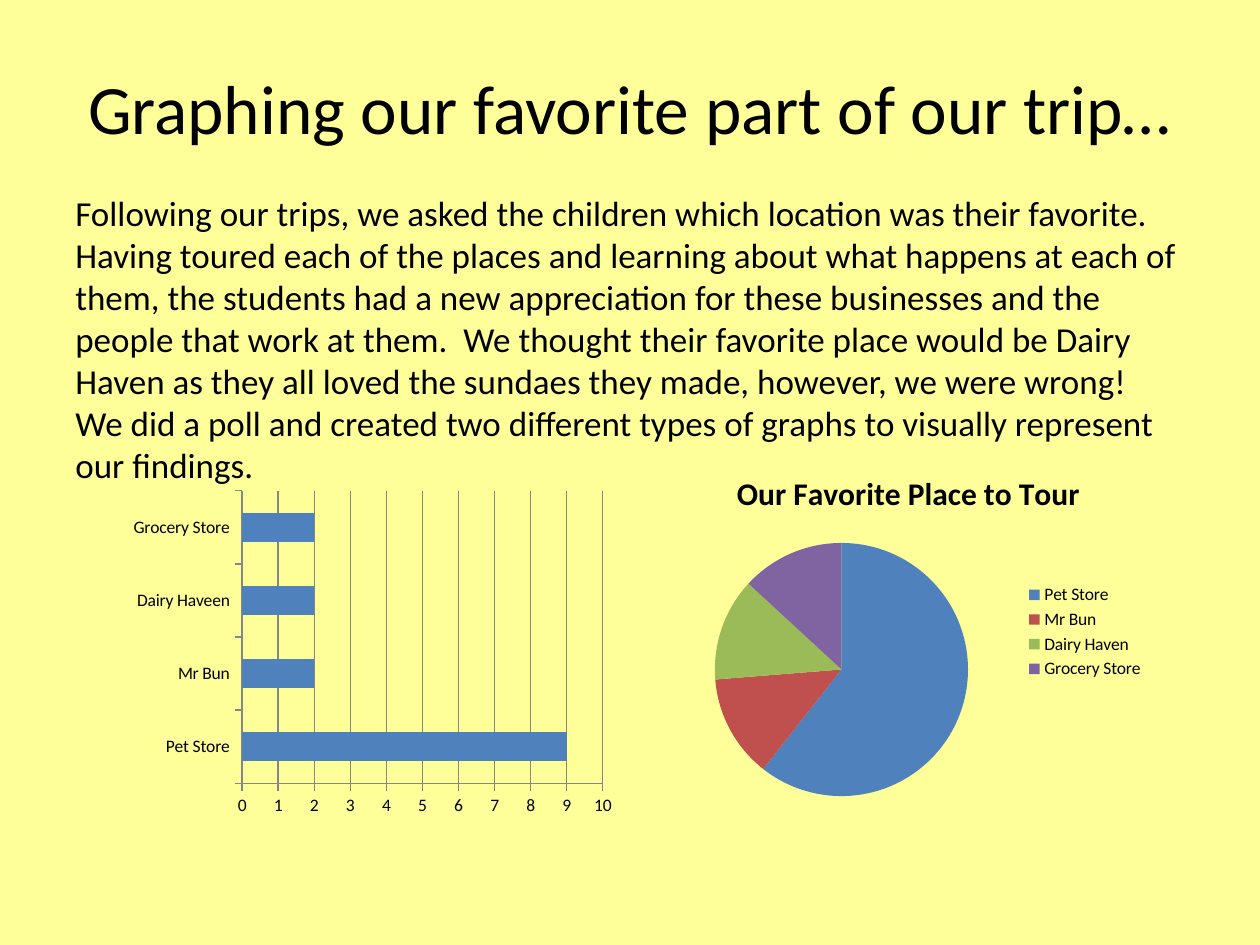
from lxml import etree
from pptx import Presentation
from pptx.chart.data import CategoryChartData
from pptx.dml.color import RGBColor
from pptx.enum.chart import XL_CHART_TYPE, XL_LEGEND_POSITION, XL_TICK_MARK
from pptx.enum.text import MSO_ANCHOR, PP_ALIGN
from pptx.util import Pt

BAR, PIE = XL_CHART_TYPE.BAR_CLUSTERED, XL_CHART_TYPE.PIE
RIGHT, OUT = XL_LEGEND_POSITION.RIGHT, XL_TICK_MARK.OUTSIDE
MIDDLE, CENTER = MSO_ANCHOR.MIDDLE, PP_ALIGN.CENTER
FONT, BLACK, GRAY = "Calibri", "000000", "868686"
COLORS = ["4F81BD", "C0504D", "9BBB59", "8064A2"]
C = "http://schemas.openxmlformats.org/drawingml/2006/chart"

rgb = RGBColor.from_string


def style(font, size):
    font.name, font.size = FONT, Pt(size)
    font.color.rgb = rgb(BLACK)


def plot_chart(kind, names, values, box, inner):
    """Add a chart; inner is the plot area as fractions x, y, w, h."""
    data = CategoryChartData()
    data.categories = names
    data.add_series("Series 1", values)
    chart = slide.shapes.add_chart(kind, *map(Pt, box), data).chart
    style(chart.font, 10)
    area = chart.plots[0]._element.getparent()
    for old in area.findall(f"{{{C}}}layout"):
        area.remove(old)
    layout = etree.Element(f"{{{C}}}layout")
    manual = etree.SubElement(layout, f"{{{C}}}manualLayout")
    marks = [("layoutTarget", "inner"), ("xMode", "edge"), ("yMode", "edge")]
    for tag, val in marks + list(zip("xywh", inner)):
        etree.SubElement(manual, f"{{{C}}}{tag}").set("val", str(val))
    area.insert(0, layout)
    return chart


prs = Presentation()
prs.slide_width, prs.slide_height = Pt(720), Pt(540)
slide = prs.slides.add_slide(prs.slide_layouts[6])
slide.background.fill.solid()
slide.background.fill.fore_color.rgb = rgb("FFFF99")

title = "Graphing our favorite part of our trip…"
story = (
    "Following our trips, we asked the children which location was their "
    "favorite.  Having toured each of the places and learning about what "
    "happens at each of them, the students had a new appreciation for these "
    "businesses and the people that work at them.  We thought their favorite "
    "place would be Dairy Haven as they all loved the sundaes they made, "
    "however, we were wrong!   We did a poll and created two different types "
    "of graphs to visually represent our findings."
)
for text, size, top, height in [(title, 39.6, 21.6, 78.5), (story, 20, 105.8, 141.8)]:
    frame = slide.shapes.add_textbox(Pt(36), Pt(top), Pt(648), Pt(height)).text_frame
    frame.word_wrap = True
    frame.text = text
    para = frame.paragraphs[0]
    style(para.runs[0].font, size)
    if text == title:
        frame.vertical_anchor = MIDDLE
        para.alignment = CENTER

# Bar chart of votes
bar = plot_chart(BAR, ["Pet Store", "Mr Bun", "Dairy Haveen", "Grocery Store"],
                 [9, 2, 2, 2], (70.6, 264.2, 294.5, 203.8), (0.23, 0.08, 0.7, 0.82))
bar.has_title = bar.has_legend = False
plot = bar.plots[0]
plot.gap_width, plot.vary_by_categories = 150, False
fill = plot.series[0].format.fill
fill.solid()
fill.fore_color.rgb = rgb(COLORS[0])
scale = bar.value_axis
scale.minimum_scale, scale.maximum_scale, scale.major_unit = 0, 10, 1
scale.has_major_gridlines = True
for axis in (bar.category_axis, scale):
    axis.major_tick_mark = OUT
for part in (bar.category_axis, scale, scale.major_gridlines):
    part.format.line.color.rgb = rgb(GRAY)
    part.format.line.width = Pt(0.75)

# Pie chart of shares
pie = plot_chart(PIE, ["Pet Store", "Mr Bun", "Dairy Haven", "Grocery Store"],
                 [60, 13, 13, 13], (377.3, 258.5, 283.7, 205.2), (0.11, 0.25, 0.51, 0.71))
pie.has_title = True
pie.chart_title.text_frame.text = "Our Favorite Place to Tour"
font = pie.chart_title.text_frame.paragraphs[0].runs[0].font
style(font, 18)
font.bold = True
pie.has_legend = True
pie.legend.position = RIGHT
pie.legend.include_in_layout = False
pie.plots[0].vary_by_categories = True
for i, color in enumerate(COLORS):
    fill = pie.plots[0].series[0].points[i].format.fill
    fill.solid()
    fill.fore_color.rgb = rgb(color)

prs.save("out.pptx")
